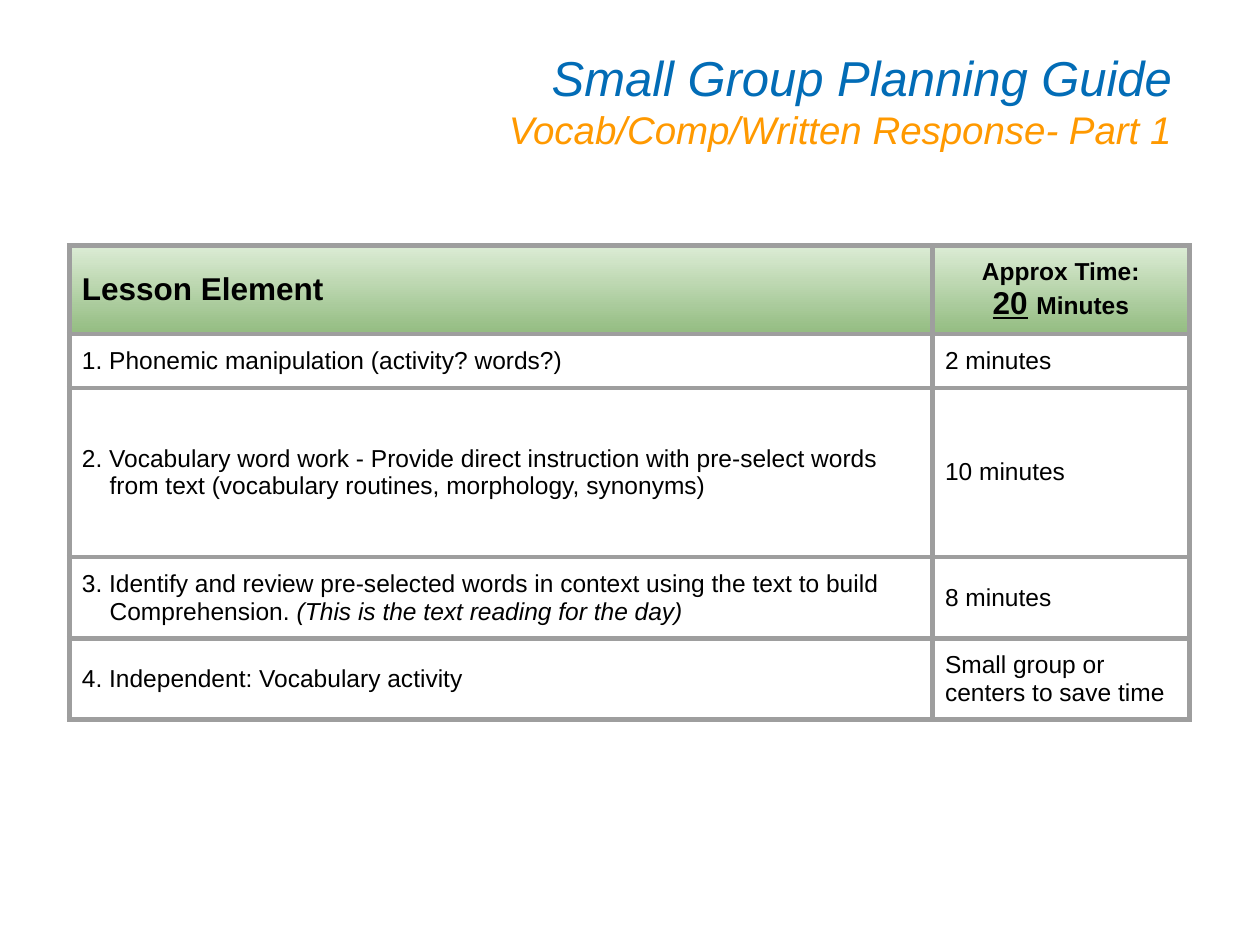
from copy import deepcopy
from lxml.etree import SubElement
from pptx import Presentation
from pptx.dml.color import RGBColor as RGB
from pptx.enum.text import MSO_ANCHOR as Anchor, MSO_AUTO_SIZE as Auto, PP_ALIGN as Align
from pptx.oxml.ns import qn
from pptx.util import Inches, Pt

COLORS = {"title": "026CB6", "sub": "FF9900", "text": "000000",
          "line": "9E9E9E", "light": "DCECD5", "dark": "93BC81"}
FONT = "Arial"
TITLE = [("Small Group Planning Guide", 28, "title"),
         ("Vocab/Comp/Written Response- Part 1", 22, "sub")]

# A cell is a list of lines, a line is a list of (text, size, style) runs
HEAD = [
    [[("Lesson Element", 18, "b")]],
    [[("Approx Time:", 14, "b")],
     [("20", 18, "bu"), (" ", 18, "b"), ("Minutes", 14, "b")]],
]
STEPS = [
    ([[("1. Phonemic manipulation (activity? words?)", 14, "")]], "2 minutes"),
    ([[("2. Vocabulary word work - Provide direct instruction with pre-select words", 14, "")],
      [("from text (vocabulary routines, morphology, synonyms)", 14, "")]], "10 minutes"),
    ([[("3. Identify and review pre-selected words in context using the text to build", 14, "")],
      [("Comprehension. ", 14, ""), ("(This is the text reading for the day)", 14, "i")]],
     "8 minutes"),
    ([[("4. Independent: Vocabulary activity", 14, "")]],
     "Small group or centers to save time"),
]
ROWS = [HEAD] + [[step, [[(time, 14, "")]]] for step, time in STEPS]
WIDTHS = [6.85, 2.04]
HEIGHTS = [0.7, 0.43, 1.34, 0.65, 0.64]
PAD, INDENT = Inches(0.1), Inches(0.22)


def color(name):
    return RGB.from_string(COLORS[name])


def style(run, size, name, marks=""):
    font = run.font
    font.name, font.size = FONT, Pt(size)
    font.color.rgb = color(name)
    font.bold, font.italic = "b" in marks, "i" in marks
    font.underline = "u" in marks


def border(cell):
    props = cell._tc.get_or_add_tcPr()
    for i, side in enumerate(("lnL", "lnR", "lnT", "lnB")):
        line = props.makeelement(qn("a:" + side), {"w": str(Pt(3))})
        fill = SubElement(line, qn("a:solidFill"))
        SubElement(fill, qn("a:srgbClr"), val=COLORS["line"])
        props.insert(i, line)


def shade(cell, head):
    if not head:
        cell.fill.background()
        return
    cell.fill.gradient()
    cell.fill.gradient_angle = 270
    for stop, name, spot in zip(cell.fill.gradient_stops, ("light", "dark"), (0, 1)):
        stop.color.rgb, stop.position = color(name), spot


def write(cell, lines, center):
    frame = cell.text_frame
    for i, line in enumerate(lines):
        para = frame.add_paragraph() if i else frame.paragraphs[0]
        para.alignment = Align.CENTER if center else Align.LEFT
        if i and not center:
            para._p.get_or_add_pPr().set("marL", str(INDENT))
        for text, size, marks in line:
            run = para.add_run()
            run.text = text
            style(run, size, "text", marks)


deck = Presentation()
deck.slide_width, deck.slide_height = Inches(10), Inches(7.5)
slide = deck.slides.add_slide(deck.slide_layouts[5])

# Title
title = slide.shapes.title
title.left, title.top = Inches(2.89), Inches(0.25)
title.width, title.height = Inches(6.51), Inches(1.08)
frame = title.text_frame
frame.text = "\v".join(text for text, _, _ in TITLE)
frame.auto_size, frame.vertical_anchor = Auto.NONE, Anchor.MIDDLE
para = frame.paragraphs[0]
para.alignment = Align.RIGHT
for run, (_, size, name) in zip(para.runs, TITLE):
    style(run, size, name, "i")
para._p.find(qn("a:br")).append(deepcopy(para.runs[0]._r.rPr))

# Lesson table
table = slide.shapes.add_table(len(ROWS), len(WIDTHS), Inches(0.55), Inches(1.95),
                               Inches(sum(WIDTHS)), Inches(sum(HEIGHTS))).table
for col, width in zip(table.columns, WIDTHS):
    col.width = Inches(width)
for r, (row, height) in enumerate(zip(ROWS, HEIGHTS)):
    table.rows[r].height = Inches(height)
    for c, lines in enumerate(row):
        cell = table.cell(r, c)
        cell.vertical_anchor = Anchor.MIDDLE
        cell.margin_left = cell.margin_right = PAD
        cell.margin_top = cell.margin_bottom = PAD
        write(cell, lines, r == 0 and c == 1)
        shade(cell, r == 0)
        border(cell)

deck.save("out.pptx")
